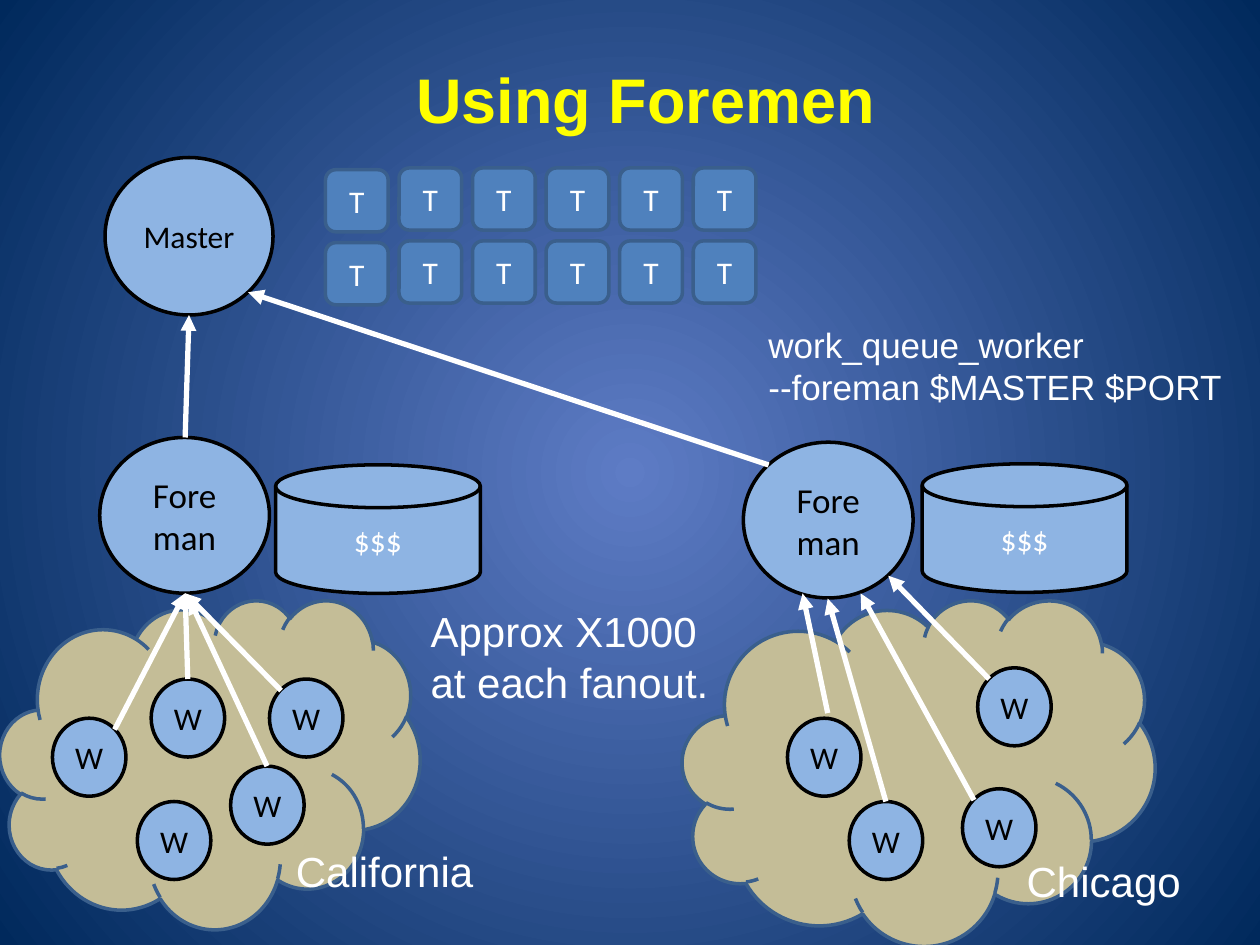
from dataclasses import dataclass

from lxml import etree
from pptx import Presentation
from pptx.dml.color import RGBColor
from pptx.enum.shapes import MSO_CONNECTOR, MSO_SHAPE
from pptx.enum.text import MSO_ANCHOR, MSO_AUTO_SIZE, PP_ALIGN
from pptx.oxml.ns import qn
from pptx.util import Pt

CLOUD, DISK = MSO_SHAPE.CLOUD, MSO_SHAPE.FLOWCHART_MAGNETIC_DISK
OVAL, ROUNDED = MSO_SHAPE.OVAL, MSO_SHAPE.ROUNDED_RECTANGLE
STRAIGHT = MSO_CONNECTOR.STRAIGHT
CENTER, MIDDLE, TOP = PP_ALIGN.CENTER, MSO_ANCHOR.MIDDLE, MSO_ANCHOR.TOP
GROW = MSO_AUTO_SIZE.SHAPE_TO_FIT_TEXT


@dataclass(frozen=True)
class Theme:
    glow: str = "5E7CC5"
    edge: str = "00295C"
    title: str = "FFFF00"
    light: str = "FFFFFF"
    dark: str = "000000"
    node: str = "8EB4E3"
    task: str = "4F81BD"
    outline: str = "3A5F8C"
    cloud: str = "C4BD97"
    heading_font: str = "Arial"
    node_font: str = "Calibri"
    title_size: int = 36
    note_size: int = 24
    command_size: int = 20
    foreman_size: int = 20
    node_size: int = 18
    border: int = 2
    arrow: int = 3


THEME = Theme()
FOREMAN_SIZE = (97, 89)
DISK_SIZE = (117, 73.5)
WORKER_SIZE = (42, 44.6)


@dataclass(frozen=True)
class Site:
    """One cloud with its foreman; all positions are relative to the site's box."""
    name: str
    name_box: tuple
    cloud: tuple
    foreman: tuple
    disk: tuple
    workers: tuple
    links: tuple


CALIFORNIA = Site(
    name="California", name_box=(162, 229.5, 117, 36),
    cloud=(0, 92.7, 240, 188), foreman=(57, 0), disk=(157.5, 15.6),
    workers=((30, 160.4), (86.4, 138), (131.8, 187.8), (78.5, 208), (154, 138)),
    links=(((107.3, 138), (105.8, 89)), ((152.6, 187.8), (108, 92)),
           ((160.6, 144.6), (105.8, 89)), ((65.5, 166.9), (105.8, 89)),
           ((105.8, 0), (108, -70))))
CHICAGO = Site(
    name="Chicago", name_box=(189.6, 235.2, 103.7, 36),
    cloud=(0, 92.7, 270, 197.5), foreman=(34.8, 2.7), disk=(137, 15),
    workers=((60, 160.4), (160, 200.7), (95.3, 208), (168.7, 131.6)),
    links=(((83, 157.5), (68.6, 89.1)), ((175.2, 138), (117.6, 79)),
           ((116.2, 208), (83, 92)), ((166.6, 207.2), (101.8, 89.1)),
           ((49.2, 15.7), (-248.2, -83))))


def style_font(para, family, size, color, bold=False):
    para.font.name = family
    para.font.size = Pt(size)
    para.font.bold = bold
    para.font.color.rgb = RGBColor.from_string(color)


def add_node(page, kind, box, fill, line, text="", size=THEME.node_size,
             color=THEME.dark):
    node = page.shapes.add_shape(kind, *map(Pt, box))
    node.shadow.inherit = False
    node.fill.solid()
    node.fill.fore_color.rgb = RGBColor.from_string(fill)
    node.line.color.rgb = RGBColor.from_string(line)
    node.line.width = Pt(THEME.border)
    if text:
        frame = node.text_frame
        frame.margin_left = frame.margin_right = 0
        frame.vertical_anchor = MIDDLE
        para = frame.paragraphs[0]
        para.text = text
        para.alignment = CENTER
        style_font(para, THEME.node_font, size, color)


def add_arrow(page, start, end):
    arrow = page.shapes.add_connector(STRAIGHT, *map(Pt, (*start, *end)))
    arrow.line.color.rgb = RGBColor.from_string(THEME.light)
    arrow.line.width = Pt(THEME.arrow)
    etree.SubElement(arrow.line._get_or_add_ln(), qn("a:tailEnd"), type="triangle")
    etree.SubElement(arrow._element.spPr, qn("a:effectLst"))


def add_note(page, box, lines, size=THEME.note_size):
    note = page.shapes.add_textbox(*map(Pt, box))
    frame = note.text_frame
    frame.word_wrap = False
    frame.auto_size = GROW
    frame.text = "\n".join(lines)
    for para in frame.paragraphs:
        style_font(para, THEME.heading_font, size, THEME.light)


def paint_background(page):
    """Fill the page with a circular glow."""
    fill = page.background.fill
    fill.gradient()
    for stop, color in zip(fill.gradient_stops, (THEME.glow, THEME.edge)):
        stop.color.rgb = RGBColor.from_string(color)
    linear = page.element.find(".//" + qn("a:lin"))
    circle = etree.Element(qn("a:path"), path="circle")
    etree.SubElement(circle, qn("a:fillToRect"),
                     l="50000", t="50000", r="50000", b="50000")
    linear.getparent().replace(linear, circle)


def set_title(page, box, text):
    title = page.shapes.title
    title.left, title.top, title.width, title.height = map(Pt, box)
    title.text_frame.vertical_anchor = TOP
    para = title.text_frame.paragraphs[0]
    para.text = text
    para.alignment = CENTER
    style_font(para, THEME.heading_font, THEME.title_size, THEME.title, bold=True)


def add_tasks(page, box, rows=2, columns=6, gap=6.2):
    left, top, width, height = box
    tile_width = (width - gap * (columns - 1)) / columns
    tile_height = (height - gap * (rows - 1)) / rows
    for row in range(rows):
        for column in range(columns):
            drop = 1 if column == 0 else 0  # the first column hangs a little lower
            tile = (left + column * (tile_width + gap),
                    top + row * (tile_height + gap) + drop,
                    tile_width, tile_height)
            add_node(page, ROUNDED, tile, THEME.task, THEME.outline, "T",
                     color=THEME.light)


def add_site(page, left, top, site):
    def place(x, y, *size):
        return (left + x, top + y, *size)

    add_node(page, CLOUD, place(*site.cloud), THEME.cloud, THEME.outline)
    for worker in site.workers:
        add_node(page, OVAL, place(*worker, *WORKER_SIZE),
                 THEME.node, THEME.dark, "W")
    add_node(page, OVAL, place(*site.foreman, *FOREMAN_SIZE),
             THEME.node, THEME.dark, "Fore man", THEME.foreman_size)
    add_node(page, DISK, place(*site.disk, *DISK_SIZE),
             THEME.node, THEME.dark, "$$$", color=THEME.light)
    for start, end in site.links:
        add_arrow(page, place(*start), place(*end))
    add_note(page, place(*site.name_box), [site.name])


def main():
    deck = Presentation()
    deck.slide_width, deck.slide_height = Pt(720), Pt(540)
    page = deck.slides.add_slide(deck.slide_layouts[5])
    paint_background(page)
    set_title(page, (54, 31, 630, 107), "Using Foremen")
    add_node(page, OVAL, (60, 90, 96, 90), THEME.node, THEME.dark, "Master")
    add_tasks(page, (186, 96, 246, 77.2))
    add_site(page, 0, 250, CALIFORNIA)
    add_site(page, 390, 250, CHICAGO)
    add_note(page, (239, 342.7, 175, 65.5), ["Approx X1000", "at each fanout."])
    add_note(page, (432, 181.4, 275.8, 55.4),
             ["work_queue_worker", "--foreman $MASTER $PORT"], THEME.command_size)
    deck.save("out.pptx")


if __name__ == "__main__":
    main()
